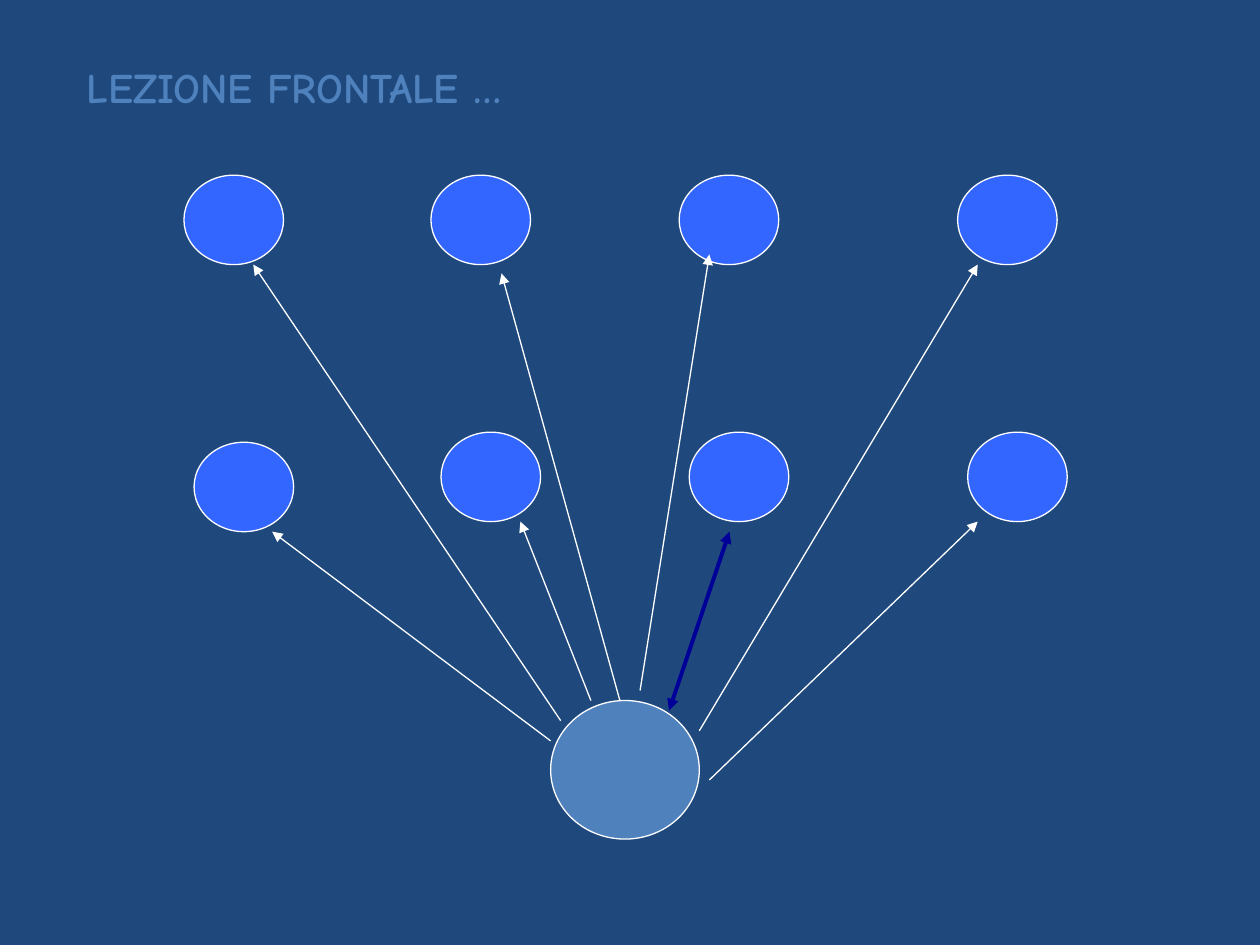
import pptx
import pptx.dml.color
import pptx.enum.shapes
import pptx.enum.text
import pptx.oxml.ns
import pptx.util
from lxml import etree
from pptx.dml.color import RGBColor
from pptx.util import Inches

NAVY = RGBColor(0x1F, 0x49, 0x7D)
STEEL = RGBColor(0x4F, 0x81, 0xBD)
BLUE = RGBColor(0x33, 0x66, 0xFF)
DARK_BLUE = RGBColor(0x00, 0x00, 0x99)
WHITE = RGBColor(0xFF, 0xFF, 0xFF)

# Lengths below are inches from the top left corner of the class diagram.
PUPIL_SIZE = (0.79, 0.71)
PUPIL_COLUMNS = (0, 1.96, 3.93, 6.14)
FRONT_SHIFT = 0.08
BACK_TOPS = (0, 0, 0, 0)
FRONT_TOPS = (2.12, 2.04, 2.04, 2.04)
TEACHER = (2.91, 4.17, 1.18, 1.1)
ONE_WAY_ARROWS = (
    ((2.91, 4.49), (0.7, 2.83)),
    ((3.23, 4.17), (2.67, 2.75)),
    ((4.17, 4.8), (6.3, 2.75)),
    ((2.99, 4.33), (0.55, 0.71)),
    ((3.46, 4.17), (2.52, 0.78)),
    ((3.62, 4.09), (4.17, 0.63)),
    ((4.09, 4.41), (6.3, 0.71)),
)
DIALOGUE_ARROW = ((3.85, 4.25), (4.33, 2.83))


def write_text(frame, text, *, font, size, color, bold=False,
               align=pptx.enum.text.PP_ALIGN.LEFT):
    para = frame.paragraphs[0]
    para.alignment = align
    span = para.add_run()
    span.text = text
    span.font.name = font
    span.font.size = pptx.util.Pt(size)
    span.font.bold = bold
    span.font.color.rgb = color


def place_title(page, box, text):
    title = page.shapes.title
    title.left, title.top, title.width, title.height = map(Inches, box)
    frame = title.text_frame
    frame.word_wrap = True
    frame.auto_size = pptx.enum.text.MSO_AUTO_SIZE.SHAPE_TO_FIT_TEXT
    frame.vertical_anchor = pptx.enum.text.MSO_ANCHOR.TOP
    write_text(frame, text, font="Comic Neue", size=24, color=STEEL, bold=True)


def add_circle(page, left, top, width, height, color):
    circle = page.shapes.add_shape(
        pptx.enum.shapes.MSO_SHAPE.OVAL,
        Inches(left), Inches(top), Inches(width), Inches(height))
    circle.shadow.inherit = False
    circle.fill.solid()
    circle.fill.fore_color.rgb = color
    circle.line.color.rgb = WHITE
    circle.line.width = pptx.util.Pt(0.75)


def add_arrow(page, start, end, *, color=WHITE, width=0.75, ends=("tailEnd",)):
    arrow = page.shapes.add_connector(
        pptx.enum.shapes.MSO_CONNECTOR.STRAIGHT, *map(Inches, start + end))
    arrow.line.color.rgb = color
    arrow.line.width = pptx.util.Pt(width)
    outline = arrow.line._get_or_add_ln()
    for name in ends:
        etree.SubElement(outline, pptx.oxml.ns.qn(f"a:{name}"), type="triangle")
    etree.SubElement(arrow._element.spPr, pptx.oxml.ns.qn("a:effectLst"))


def draw_class(page, left, top):
    """Draw the teacher, two rows of pupils and the arrows between them."""
    def shift(point):
        return left + point[0], top + point[1]

    add_circle(page, *shift(TEACHER[:2]), *TEACHER[2:], STEEL)
    for indent, tops in ((FRONT_SHIFT, FRONT_TOPS), (0, BACK_TOPS)):
        for column, row in zip(PUPIL_COLUMNS, tops):
            add_circle(page, *shift((column + indent, row)), *PUPIL_SIZE, BLUE)
    for start, end in ONE_WAY_ARROWS:
        add_arrow(page, shift(start), shift(end))
    add_arrow(page, *map(shift, DIALOGUE_ARROW), color=DARK_BLUE, width=2.25,
              ends=("headEnd", "tailEnd"))


def main():
    deck = pptx.Presentation()
    deck.slide_width, deck.slide_height = Inches(10), Inches(7.5)
    page = deck.slides.add_slide(deck.slide_layouts.get_by_name("Title Only"))
    page.background.fill.solid()
    page.background.fill.fore_color.rgb = NAVY
    place_title(page, (0.59, 0.44, 4.17, 0.5), "LEZIONE FRONTALE …")
    draw_class(page, 1.46, 1.39)
    deck.save("out.pptx")


if __name__ == "__main__":
    main()
